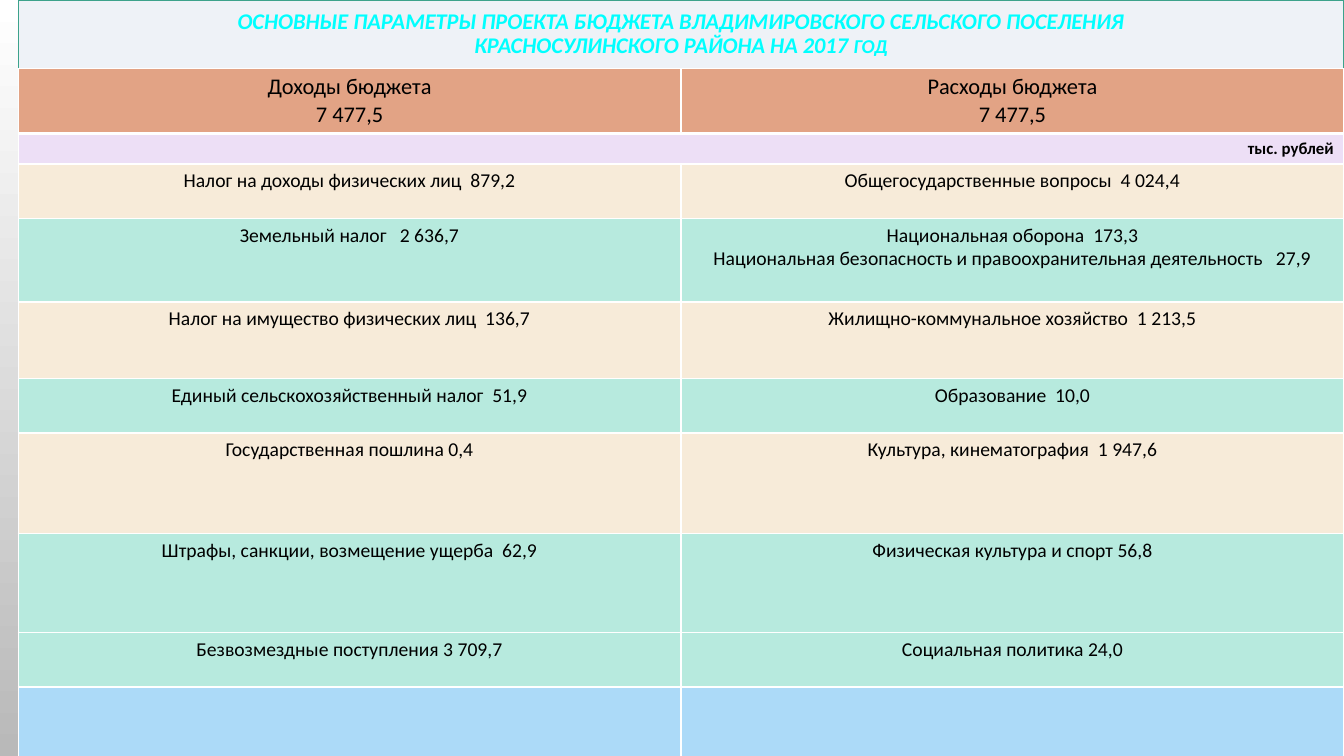
from lxml.etree import SubElement
from pptx import Presentation
from pptx.dml.color import RGBColor
from pptx.enum.shapes import MSO_SHAPE
from pptx.enum.text import MSO_ANCHOR, PP_ALIGN
from pptx.oxml.ns import qn
from pptx.util import Inches, Pt

COLORS = {
    "white": "FFFFFF", "gray": "B9B9B9", "black": "000000", "cyan": "00FFFF",
    "title": "EEF2F7", "outline": "3CA28B", "header": "E2A385", "unit": "EDDFF6",
    "cream": "F7EBD9", "mint": "B7EADE", "blue": "ACDAF8",
}
LEFT, WIDTH, TITLE_HEIGHT = 0.18, 13.15, 0.68

# Row height, fill, font size, cell texts
ROWS = [
    (0.61, "header", 16, ["Доходы бюджета\n7 477,5", "Расходы бюджета\n7 477,5"]),
    (0.29, "unit", 12, ["тыс. рублей"]),
    (0.54, "cream", 14, ["Налог на доходы физических лиц  879,2",
                         "Общегосударственные вопросы  4 024,4"]),
    (0.83, "mint", 14, ["Земельный налог   2 636,7",
                        "Национальная оборона  173,3\n"
                        "Национальная безопасность и правоохранительная деятельность   27,9"]),
    (0.76, "cream", 14, ["Налог на имущество физических лиц  136,7",
                         "Жилищно-коммунальное хозяйство  1 213,5"]),
    (0.54, "mint", 14, ["Единый сельскохозяйственный налог  51,9", "Образование  10,0"]),
    (1.0, "cream", 14, ["Государственная пошлина 0,4", "Культура, кинематография  1 947,6"]),
    (0.98, "mint", 14, ["Штрафы, санкции, возмещение ущерба  62,9",
                        "Физическая культура и спорт 56,8"]),
    (0.54, "mint", 14, ["Безвозмездные поступления 3 709,7", "Социальная политика 24,0"]),
    (0.72, "blue", 14, ["", ""]),
]


def color(name):
    return RGBColor.from_string(COLORS[name])


def add_text(para, text, size, fill="black", bold=False, italic=False, align=PP_ALIGN.CENTER):
    para.alignment = align
    span = para.add_run()
    span.text = text
    font = span.font
    font.name, font.size, font.bold, font.italic = "Calibri", Pt(size), bold, italic
    font.color.rgb = color(fill)


deck = Presentation()
deck.slide_width, deck.slide_height = Inches(13.33), Inches(7.5)
page = deck.slides.add_slide(deck.slide_layouts[6])

backdrop = page.background.fill
backdrop.gradient()
backdrop.gradient_angle = 270
for stop, position, name in zip(backdrop.gradient_stops, (0, 1), ("white", "gray")):
    stop.position = position
    stop.color.rgb = color(name)

title = page.shapes.add_shape(MSO_SHAPE.RECTANGLE, Inches(LEFT), Inches(0),
                              Inches(WIDTH), Inches(TITLE_HEIGHT))
title.shadow.inherit = False
title.fill.solid()
title.fill.fore_color.rgb = color("title")
title.line.color.rgb = color("outline")
title.line.width = Pt(0.75)
title.text_frame.word_wrap = True
title.text_frame.vertical_anchor = MSO_ANCHOR.MIDDLE
para = title.text_frame.paragraphs[0]
para.line_spacing = 0.9
title_format = {"fill": "cyan", "bold": True, "italic": True}
add_text(para, "ОСНОВНЫЕ ПАРАМЕТРЫ ПРОЕКТА БЮДЖЕТА ВЛАДИМИРОВСКОГО СЕЛЬСКОГО ПОСЕЛЕНИЯ",
         16, **title_format)
para.add_line_break()
add_text(para, "КРАСНОСУЛИНСКОГО РАЙОНА НА 2017 ", 16, **title_format)
add_text(para, "ГОД", 14, **title_format)

table = page.shapes.add_table(len(ROWS), 2, Inches(LEFT), Inches(TITLE_HEIGHT), Inches(WIDTH),
                              Inches(sum(row[0] for row in ROWS))).table
table.first_row = table.horz_banding = False
for column in table.columns:
    column.width = Inches(WIDTH / 2)

for index, (height, fill, size, texts) in enumerate(ROWS):
    table.rows[index].height = Inches(height)
    is_unit = fill == "unit"
    if is_unit:
        table.cell(index, 0).merge(table.cell(index, 1))
    for cell in table.rows[index].cells:
        properties = cell._tc.get_or_add_tcPr()
        for side in ("lnL", "lnR", "lnT", "lnB"):
            points = 3 if fill == "header" and side == "lnB" else 1
            border = SubElement(properties, qn(f"a:{side}"), w=str(Pt(points)))
            SubElement(SubElement(border, qn("a:solidFill")), qn("a:srgbClr"), val=COLORS["white"])
        cell.fill.solid()
        cell.fill.fore_color.rgb = color(fill)
    for column_index, text in enumerate(texts):
        frame = table.cell(index, column_index).text_frame
        for line_index, line in enumerate(text.split("\n") if text else []):
            para = frame.add_paragraph() if line_index else frame.paragraphs[0]
            add_text(para, line, size, bold=is_unit,
                     align=PP_ALIGN.RIGHT if is_unit else PP_ALIGN.CENTER)

deck.save("out.pptx")
